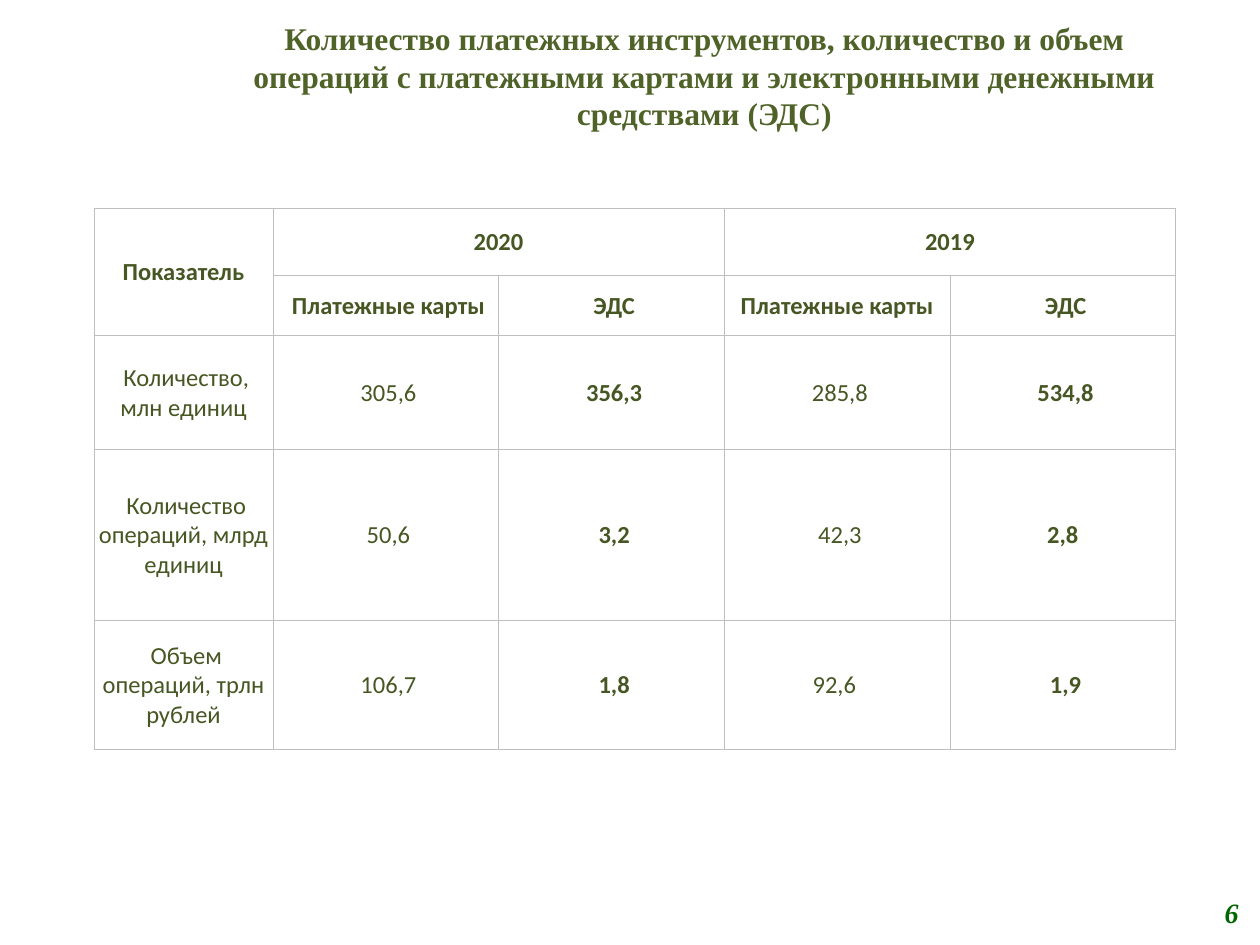
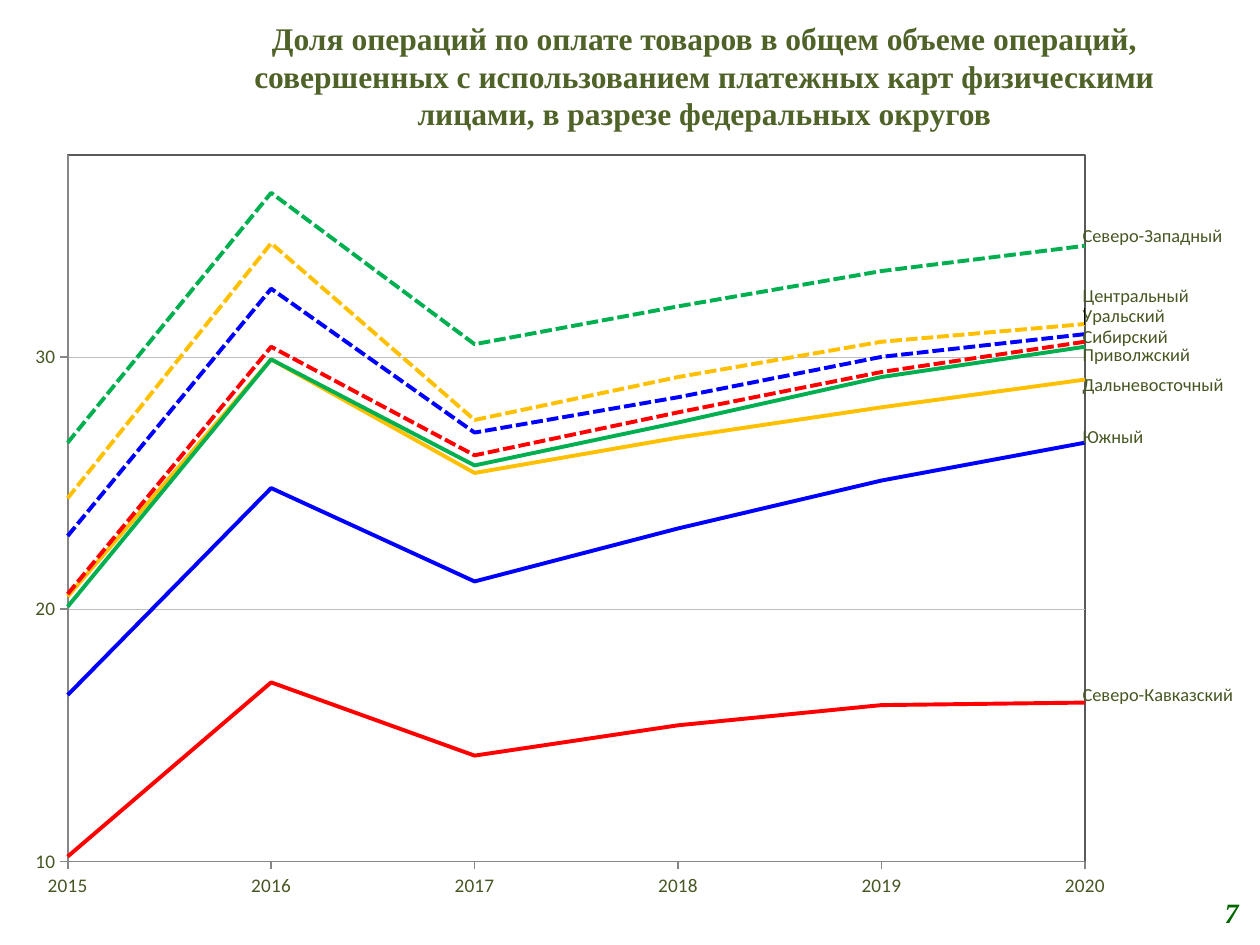
from lxml import etree
from pptx import Presentation
from pptx.chart.data import XyChartData
from pptx.dml.color import RGBColor
from pptx.enum.chart import XL_CHART_TYPE, XL_LABEL_POSITION, XL_TICK_MARK
from pptx.enum.dml import MSO_LINE
from pptx.enum.text import MSO_ANCHOR, MSO_AUTO_SIZE, PP_ALIGN
from pptx.oxml import parse_xml
from pptx.oxml.ns import nsdecls, qn
from pptx.util import Cm, Pt

SCATTER = XL_CHART_TYPE.XY_SCATTER_LINES_NO_MARKERS
LABEL_RIGHT = XL_LABEL_POSITION.RIGHT
TICK_OUTSIDE, TICK_NONE = XL_TICK_MARK.OUTSIDE, XL_TICK_MARK.NONE
SHORT_DASH = MSO_LINE.SQUARE_DOT
TOP, MIDDLE = MSO_ANCHOR.TOP, MSO_ANCHOR.MIDDLE
NO_AUTOFIT = MSO_AUTO_SIZE.NONE
CENTER, RIGHT = PP_ALIGN.CENTER, PP_ALIGN.RIGHT

COLORS = {
    "title": "4F6228",
    "text": "465723",
    "number": "006600",
    "grid": "BFBFBF",
    "axis": "868686",
    "frame": "595959",
    "yellow": "FFC000",
    "green": "00B050",
    "blue": "0000FF",
    "red": "FF0000",
}
HEADING_FONT, BODY_FONT = "Times New Roman", "Calibri"
TITLE_ONLY_LAYOUT = 5

NUMBER_BOX = (23.9, 17.88, 1.32, 1.02)
TABLE_BOX = (1.9, 4.19, 21.8, 10.92)
CHART_BOX = (0.53, 2.72, 24.56, 15.57)

COLUMN_WIDTHS = [3.6] + [4.55] * 4
ROW_HEIGHTS = [1.35, 1.22, 2.3, 3.45, 2.6]
TABLE_ROWS = [
    ["Показатель", "2020", "", "2019", ""],
    ["", " Платежные карты", " ЭДС", "Платежные карты", " ЭДС"],
    [" Количество, млн единиц", " 305,6", " 356,3", " 285,8", " 534,8"],
    [" Количество операций, млрд единиц", " 50,6", " 3,2", " 42,3", "2,8"],
    [" Объем операций, трлн рублей", " 106,7", " 1,8", "92,6 ", " 1,9"],
]
MERGES = [((0, 0), (1, 0)), ((0, 1), (0, 2)), ((0, 3), (0, 4))]

YEARS = range(2015, 2021)
# Each district: name, color, dashed, label shift in chart heights, shares by year
DISTRICTS = [
    ("Центральный", "yellow", True, -0.035, [24.4, 34.5, 27.5, 29.2, 30.6, 31.3]),
    ("Северо-Западный", "green", True, -0.012, [26.6, 36.5, 30.5, 32, 33.4, 34.4]),
    ("Южный", "blue", False, -0.006, [16.6, 24.8, 21.1, 23.2, 25.1, 26.6]),
    ("Северо-Кавказский", "red", False, -0.009, [10.2, 17.1, 14.2, 15.4, 16.2, 16.3]),
    ("Приволжский", "green", False, 0.012, [20.1, 29.9, 25.7, 27.4, 29.2, 30.4]),
    ("Уральский", "blue", True, -0.023, [22.9, 32.7, 27, 28.4, 30, 30.9]),
    ("Сибирский", "red", True, -0.005, [20.6, 30.4, 26.1, 27.8, 29.4, 30.6]),
    ("Дальневосточный", "yellow", False, 0.008, [20.5, 29.9, 25.4, 26.8, 28, 29.1]),
]


def rgb(name):
    """Return the named color."""
    return RGBColor.from_string(COLORS[name])


def place(box):
    """Convert a box in centimetres to lengths."""
    return [Cm(length) for length in box]


def style_font(font, name, size, color, bold=False, italic=False):
    """Set the usual font properties."""
    font.name, font.size, font.bold, font.italic = name, Pt(size), bold, italic
    font.color.rgb = rgb(color)


def style_line(line, color, width):
    """Set the color and the width of a line."""
    line.color.rgb = rgb(color)
    line.width = Pt(width)


def add_titled_slide(presentation, title, title_height, number):
    """Add a slide with its title and its number."""
    slide = presentation.slides.add_slide(presentation.slide_layouts[TITLE_ONLY_LAYOUT])
    shape = slide.shapes.title
    shape.left, shape.top, shape.width, shape.height = place((4.7, 0.25, 19, title_height))
    frame = shape.text_frame
    frame.text = title
    frame.auto_size, frame.vertical_anchor = NO_AUTOFIT, TOP
    paragraph = frame.paragraphs[0]
    paragraph.alignment = CENTER
    style_font(paragraph.font, HEADING_FONT, 18, "title", bold=True)

    frame = slide.shapes.add_textbox(*place(NUMBER_BOX)).text_frame
    frame.text = str(number)
    frame.word_wrap, frame.vertical_anchor = True, MIDDLE
    paragraph = frame.paragraphs[0]
    paragraph.alignment = RIGHT
    style_font(paragraph.font, HEADING_FONT, 16, "number", bold=True, italic=True)
    return slide


def add_borders(cell):
    """Draw a thin line on every side of a cell."""
    properties = cell._tc.get_or_add_tcPr()
    for side in ("lnL", "lnR", "lnT", "lnB"):
        border = etree.SubElement(properties, qn(f"a:{side}"), w=str(Pt(0.25)))
        fill = etree.SubElement(border, qn("a:solidFill"))
        etree.SubElement(fill, qn("a:srgbClr"), val=COLORS["grid"])


def add_payments_table(slide, box):
    """Add the table of payment cards and electronic money."""
    table = slide.shapes.add_table(len(ROW_HEIGHTS), len(COLUMN_WIDTHS), *place(box)).table
    table.first_row = table.horz_banding = False
    for column, width in zip(table.columns, COLUMN_WIDTHS):
        column.width = Cm(width)
    for row, height in zip(table.rows, ROW_HEIGHTS):
        row.height = Cm(height)
    for start, end in MERGES:
        table.cell(*start).merge(table.cell(*end))
    for row_index, texts in enumerate(TABLE_ROWS):
        for column_index, text in enumerate(texts):
            cell = table.cell(row_index, column_index)
            add_borders(cell)
            cell.fill.background()
            cell.vertical_anchor = MIDDLE
            cell.margin_left = cell.margin_right = cell.margin_top = Cm(0.02)
            cell.margin_bottom = 0
            cell.text = text
            paragraph = cell.text_frame.paragraphs[0]
            paragraph.alignment = CENTER
            bold = row_index < 2 or column_index in (2, 4)
            style_font(paragraph.font, BODY_FONT, 14, "text", bold)


def make_layout(x, y, size=None):
    """Build a manual layout, of an inner plot area when a size is given."""
    values = [("x", x), ("y", y)]
    if size:
        values = [("layoutTarget", "inner"), ("xMode", "edge"), ("yMode", "edge"),
                  *values, ("w", size[0]), ("h", size[1])]
    parts = "".join(f'<c:{tag} val="{value}"/>' for tag, value in values)
    return parse_xml(f'<c:layout {nsdecls("c")}><c:manualLayout>{parts}'
                     "</c:manualLayout></c:layout>")


def style_axis(axis, minimum, maximum, step, number_format):
    """Set the scale and the look of an axis."""
    axis.minimum_scale, axis.maximum_scale, axis.major_unit = minimum, maximum, step
    axis.major_tick_mark, axis.minor_tick_mark = TICK_OUTSIDE, TICK_NONE
    axis.tick_labels.number_format = number_format
    axis.tick_labels.number_format_is_linked = False
    style_font(axis.tick_labels.font, BODY_FONT, 11, "text")
    style_line(axis.format.line, "axis", 1)


def label_last_point(series, shift):
    """Write the series name beside its last point."""
    label = series.points[len(YEARS) - 1].data_label
    style_font(label.font, BODY_FONT, 10.5, "text")
    label.position = LABEL_RIGHT
    for flag in series._element.xpath(".//c:showVal"):
        flag.set("val", "0")
    element = series._element.xpath(".//c:dLbl")[0]
    element.find(qn("c:showSerName")).set("val", "1")
    element.find(qn("c:idx")).addnext(make_layout(-0.006, shift))


def frame_plot_area(chart):
    """Fix the place of the plot area and outline it."""
    area = chart._chartSpace.chart.plotArea
    for layout in area.findall(qn("c:layout")):
        area.remove(layout)
    area.insert(0, make_layout(0.034, 0.026, (0.835, 0.915)))
    area.append(parse_xml(
        f'<c:spPr {nsdecls("c", "a")}><a:noFill/><a:ln w="{Pt(0.75)}"><a:solidFill>'
        f'<a:srgbClr val="{COLORS["frame"]}"/></a:solidFill></a:ln></c:spPr>'))


def add_districts_chart(slide, box):
    """Add the chart of shares by federal district."""
    data = XyChartData()
    for name, _, _, _, shares in DISTRICTS:
        series = data.add_series(name)
        for year, share in zip(YEARS, shares):
            series.add_data_point(year, share)
    chart = slide.shapes.add_chart(SCATTER, *place(box), data).chart
    chart.has_legend = chart.has_title = False
    style_font(chart.font, BODY_FONT, 10, "text")
    plot = chart.plots[0]
    plot.vary_by_categories = False
    for series, (_, color, dashed, shift, _) in zip(plot.series, DISTRICTS):
        style_line(series.format.line, color, 2.25)
        if dashed:
            series.format.line.dash_style = SHORT_DASH
        label_last_point(series, shift)
    style_axis(chart.category_axis, YEARS[0], YEARS[-1], 1, "0")
    style_axis(chart.value_axis, 10, 38, 10, "#,##0")
    chart.category_axis.has_major_gridlines = False
    chart.value_axis.has_major_gridlines = True
    style_line(chart.value_axis.major_gridlines.format.line, "grid", 0.25)
    frame_plot_area(chart)


def main():
    """Build the two slides and save them."""
    presentation = Presentation()
    presentation.slide_width, presentation.slide_height = Cm(25.4), Cm(19.05)
    slide = add_titled_slide(
        presentation,
        "Количество платежных инструментов, количество и объем операций "
        "с платежными картами и электронными денежными средствами (ЭДС)", 3.28, 6)
    add_payments_table(slide, TABLE_BOX)
    slide = add_titled_slide(
        presentation,
        "Доля операций по оплате товаров в общем объеме операций, совершенных "
        "с использованием платежных карт физическими лицами, "
        "в разрезе федеральных округов", 2.08, 7)
    add_districts_chart(slide, CHART_BOX)
    presentation.save("out.pptx")


if __name__ == "__main__":
    main()
